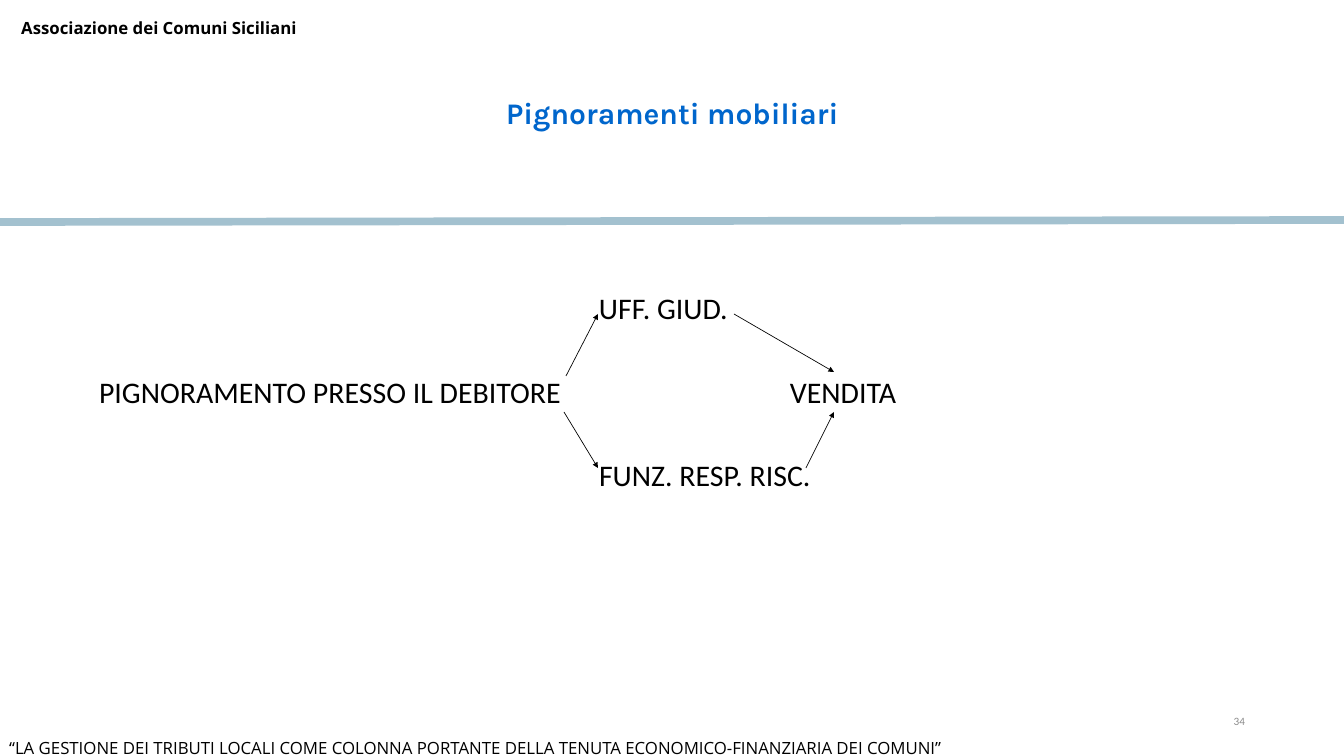
from lxml.etree import SubElement
from pptx import Presentation
from pptx.dml.color import RGBColor
from pptx.enum.shapes import MSO_CONNECTOR
from pptx.enum.text import MSO_ANCHOR, PP_ALIGN
from pptx.oxml.ns import qn
from pptx.util import Pt

BLACK = RGBColor(0, 0, 0)
GREY = RGBColor(0x8C, 0x8C, 0x8C)
BLUE = RGBColor(0, 0x66, 0xCC)
RULE = RGBColor(0xA3, 0xC1, 0xCF)

WIDTH, HEIGHT = 1344, 756
SCALE = 12192000 * 1.5 / WIDTH

FOOTER = "“LA GESTIONE DEI TRIBUTI LOCALI COME COLONNA PORTANTE DELLA TENUTA ECONOMICO-FINANZIARIA DEI COMUNI”"
HEADER = "Associazione dei Comuni Siciliani"
TITLE = "Pignoramenti mobiliari"
PAGE = "34"

ROW_TOP, ROW_STEP, ROW_HEIGHT = 290, 83.5, 36
STEPS = [
    ("UFF. GIUD.", 599, 0, 140),
    ("PIGNORAMENTO PRESSO IL DEBITORE", 99, 1, 470),
    ("VENDITA", 790, 1, 120),
    ("FUNZ. RESP. RISC.", 599, 2, 220),
]
ARROWS = [
    (566, 376, 598, 314),
    (564, 412, 598, 468),
    (734, 314, 834, 372),
    (806, 468, 834, 412),
]


def px(n):
    return round(n * SCALE)


def add_text(s, text, box, font, size, color, align=PP_ALIGN.LEFT,
             bold=False, anchor=MSO_ANCHOR.MIDDLE, spacing=None):
    tf = s.shapes.add_textbox(*map(px, box)).text_frame
    tf.margin_left = tf.margin_right = tf.margin_top = tf.margin_bottom = 0
    tf.word_wrap = True
    tf.vertical_anchor = anchor
    p = tf.paragraphs[0]
    p.text = text
    p.alignment = align
    if spacing:
        p.line_spacing = Pt(spacing)
    p.font.name, p.font.size, p.font.bold = font, Pt(size), bold
    p.font.color.rgb = color


def add_line(s, ends, color, width, arrow=False):
    c = s.shapes.add_connector(MSO_CONNECTOR.STRAIGHT, *map(px, ends))
    c.line.color.rgb = color
    c.line.width = Pt(width)
    if arrow:
        SubElement(c.line._get_or_add_ln(), qn("a:tailEnd"), type="triangle")
    SubElement(c._element.spPr, qn("a:effectLst"))


def main():
    """Build the slide on movable-asset seizures."""
    prs = Presentation()
    prs.slide_width, prs.slide_height = px(WIDTH), px(HEIGHT)
    s = prs.slides.add_slide(prs.slide_layouts[6])

    add_line(s, (0, 222, WIDTH, 220), RULE, 8.25)
    add_text(s, FOOTER, (0, 734, 951, 22), "Open Sans", 18, BLACK,
             PP_ALIGN.CENTER, anchor=MSO_ANCHOR.TOP, spacing=25.2)
    add_text(s, HEADER, (16, 17, 286, 20), "Open Sans", 18, BLACK,
             PP_ALIGN.CENTER, bold=True, anchor=MSO_ANCHOR.TOP, spacing=22.1)
    add_text(s, TITLE, (93, 40, 1159, 146), "Karla", 32, BLUE,
             PP_ALIGN.CENTER, bold=True)
    for text, left, row, width in STEPS:
        top = ROW_TOP + row * ROW_STEP
        add_text(s, text, (left, top, width, ROW_HEIGHT), "Calibri", 32, BLACK)
    for ends in ARROWS:
        add_line(s, ends, BLACK, 0.75, arrow=True)
    add_text(s, PAGE, (949, 701, 296, 40), "Calibri", 12, GREY, PP_ALIGN.RIGHT)

    prs.save("out.pptx")


if __name__ == "__main__":
    main()
